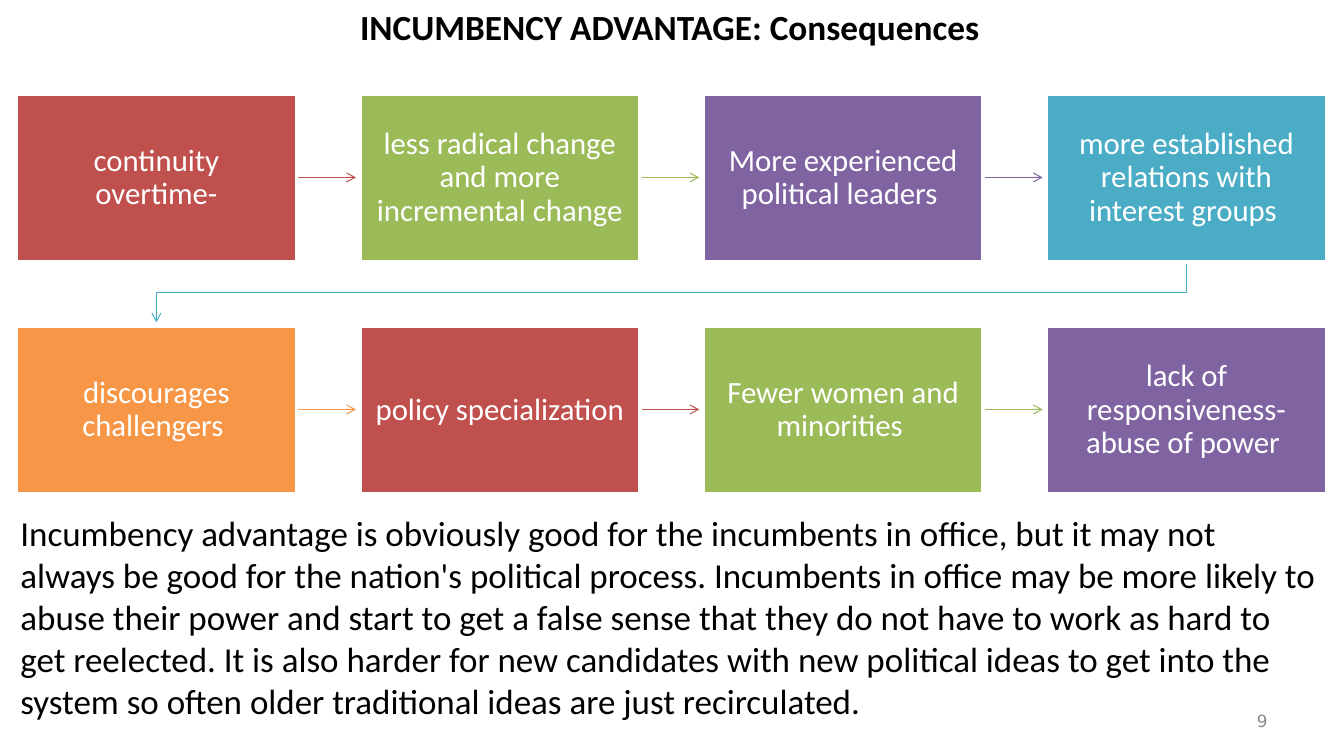
from lxml.etree import SubElement
from pptx import Presentation
from pptx.dml.color import RGBColor
from pptx.enum.shapes import MSO_CONNECTOR, MSO_SHAPE
from pptx.enum.text import MSO_ANCHOR, PP_ALIGN
from pptx.oxml.ns import qn
from pptx.util import Emu, Pt

PX = 9525
RED, GREEN, PURPLE, TEAL, ORANGE = "C0504D", "9BBB59", "8064A2", "4BACC6", "F79646"


def px(n):
    return Emu(n * PX)


def rgb(hex_color):
    return RGBColor.from_string(hex_color)


class SlideBuilder:
    font = "Calibri"
    white = "FFFFFF"
    black = "000000"

    def __init__(self, slide):
        self.slide = slide
        self.shapes = slide.shapes

    def style(self, p, size, color, align=PP_ALIGN.LEFT, font=None, bold=False):
        p.alignment = align
        p.font.size = Pt(size)
        p.font.name = font or self.font
        p.font.bold = bold
        p.font.color.rgb = rgb(color)

    def title(self, text, x, y, w, h):
        sp = self.shapes.title
        sp.left, sp.top, sp.width, sp.height = map(px, (x, y, w, h))
        tf = sp.text_frame
        tf.text = text
        tf.vertical_anchor = MSO_ANCHOR.MIDDLE
        self.style(tf.paragraphs[0], 25.2, self.black, PP_ALIGN.CENTER, bold=True)

    def text(self, text, x, y, w, h, size, color):
        tf = self.shapes.add_textbox(*map(px, (x, y, w, h))).text_frame
        tf.word_wrap = True
        tf.text = text
        self.style(tf.paragraphs[0], size, color)
        return tf

    def page_number(self, text, x, y, w, h):
        tf = self.text(text, x, y, w, h, 12, "898989")
        tf.margin_left = tf.margin_right = tf.margin_bottom = 0
        tf.margin_top = px(1)
        p = tf.paragraphs[0]
        p.font.name = "DejaVu Sans"
        p.space_before = Pt(1)

    def box(self, text, x, y, w, h, color):
        sp = self.shapes.add_shape(MSO_SHAPE.RECTANGLE, *map(px, (x, y, w, h)))
        sp.shadow.inherit = False
        sp.fill.solid()
        sp.fill.fore_color.rgb = rgb(color)
        sp.line.color.rgb = rgb(self.white)
        sp.line.width = Pt(2)
        tf = sp.text_frame
        tf.word_wrap = True
        tf.vertical_anchor = MSO_ANCHOR.MIDDLE
        tf.margin_left = tf.margin_right = tf.margin_top = tf.margin_bottom = px(13)
        tf.text = text
        p = tf.paragraphs[0]
        p.line_spacing = 0.9
        self.style(p, 22, self.white, PP_ALIGN.CENTER)

    def arrow_line(self, line, color):
        line.color.rgb = rgb(color)
        line.width = Pt(0.75)
        SubElement(line._get_or_add_ln(), qn("a:tailEnd"), type="arrow")

    def arrow(self, x1, y1, x2, y2, color):
        c = self.shapes.add_connector(MSO_CONNECTOR.STRAIGHT, *map(px, (x1, y1, x2, y2)))
        self.arrow_line(c.line, color)
        SubElement(c._element.spPr, qn("a:effectLst"))

    def bent_arrow(self, points, color):
        start, *rest = points
        fb = self.shapes.build_freeform(*start, scale=PX)
        fb.add_line_segments(rest, close=False)
        sp = fb.convert_to_shape()
        sp.shadow.inherit = False
        sp.fill.background()
        self.arrow_line(sp.line, color)


STEPS = [
    ("continuity overtime-", RED),
    ("less radical change and more incremental change", GREEN),
    ("More experienced political leaders ", PURPLE),
    ("more established relations with interest groups ", TEAL),
    ("discourages challengers ", ORANGE),
    ("policy specialization ", RED),
    ("Fewer women and minorities ", GREEN),
    ("lack of responsiveness-abuse of power ", PURPLE),
]
BODY = (
    "Incumbency advantage is obviously good for the incumbents in office, but it may not\v"
    "always be good for the nation's political process. Incumbents in office may be more "
    "likely to abuse their power and start to get a false sense that they do not have to "
    "work as hard to get reelected. It is also harder for new candidates with new political "
    "ideas to get into the system so often older traditional ideas are just recirculated."
)
COLS = 4
LEFT, TOP = 16, 90
BOX_W, BOX_H = 266, 159
STEP_X, STEP_Y = 327, 221


def main():
    prs = Presentation()
    prs.slide_width, prs.slide_height = px(1280), px(720)
    s = SlideBuilder(prs.slides.add_slide(prs.slide_layouts[5]))
    s.title("INCUMBENCY ADVANTAGE: Consequences", 86, 0, 1104, 50)
    s.page_number("9", 1197, 676, 11, 21)

    for i, (text, color) in enumerate(STEPS):
        row, col = divmod(i, COLS)
        x, y = LEFT + col * STEP_X, TOP + row * STEP_Y
        s.box(text, x, y, BOX_W, BOX_H, color)
        if col < COLS - 1:
            mid = y + BOX_H // 2
            s.arrow(x + BOX_W + 2, mid, x + STEP_X - 4, mid, color)

    first = LEFT + BOX_W // 2
    last = first + (COLS - 1) * STEP_X
    bottom = TOP + BOX_H
    turn = bottom + 30
    s.bent_arrow(
        [(last, bottom + 2), (last, turn), (first, turn), (first, TOP + STEP_Y - 4)], TEAL
    )

    s.text(BODY, 10, 482, 1254, 211, 25, s.black)
    prs.save("out.pptx")


if __name__ == "__main__":
    main()
